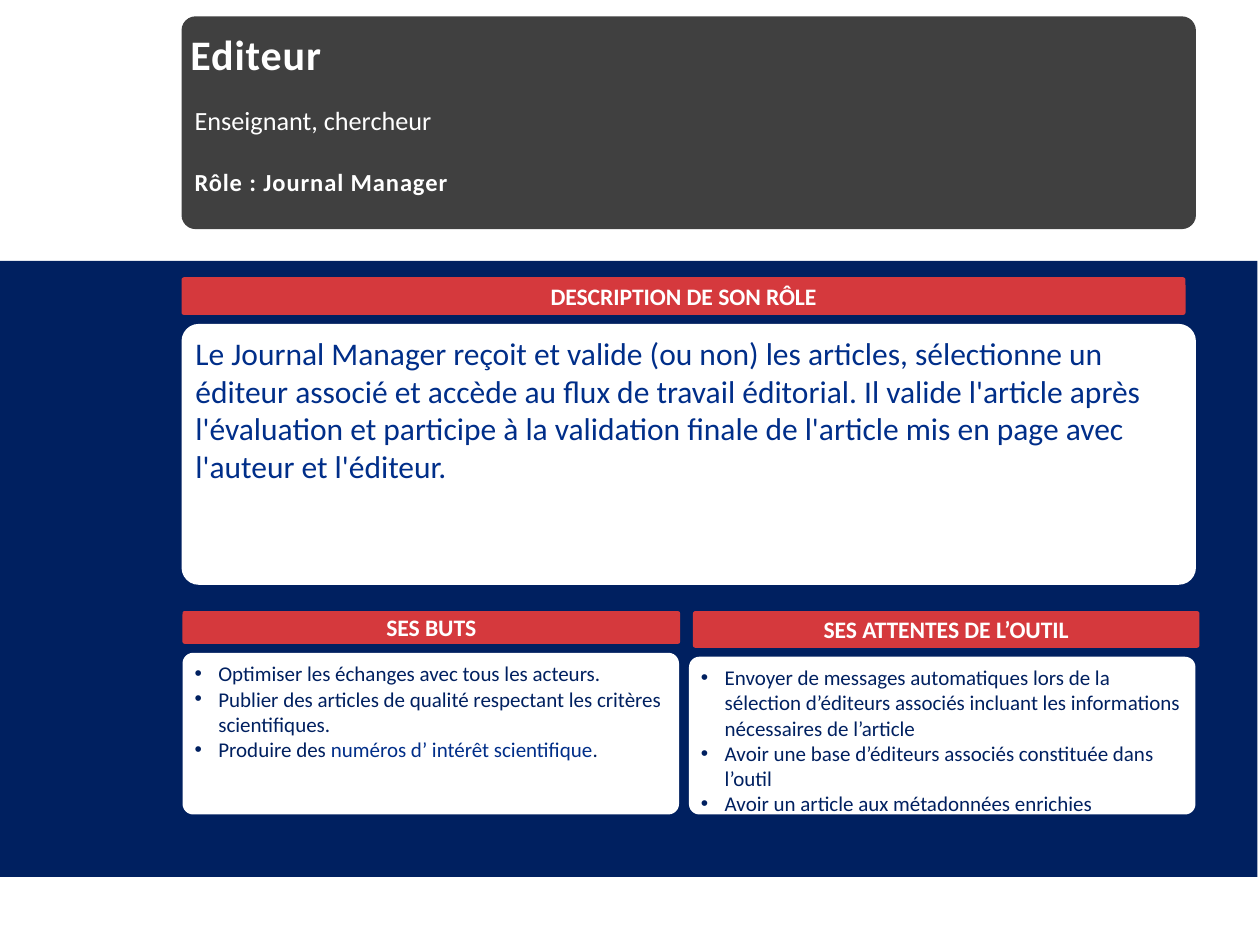
from lxml.etree import SubElement
from pptx import Presentation
from pptx.dml.color import RGBColor
from pptx.enum.shapes import MSO_SHAPE as Kind
from pptx.enum.text import MSO_ANCHOR as Anchor, MSO_AUTO_SIZE as Fit, PP_ALIGN as Align
from pptx.oxml.ns import qn
from pptx.util import Cm, Pt

HUES = {
    "navy": "002060",
    "blue": "002E89",
    "red": "D5393D",
    "dark": "404040",
    "white": "FFFFFF",
}


def hue(name):
    return RGBColor.from_string(HUES[name])


def frame(shape, anchor):
    text = shape.text_frame
    text.word_wrap = True
    text.auto_size = Fit.NONE
    text.vertical_anchor = anchor
    text.margin_left = text.margin_right = Cm(0.18)
    text.margin_top = text.margin_bottom = Cm(0.1)
    return text


def block(slide, box, fill, kind=Kind.ROUNDED_RECTANGLE, anchor=Anchor.TOP):
    shape = slide.shapes.add_shape(kind, *map(Cm, box))
    shape.shadow.inherit = False
    shape.fill.solid()
    shape.fill.fore_color.rgb = hue(fill)
    shape.line.fill.background()
    if kind == Kind.ROUNDED_RECTANGLE:
        shape.adjustments[0] = 0.066
    frame(shape, anchor)
    return shape


def style(para, size, color, bold=False, align=Align.LEFT):
    para.alignment = align
    font = para.font
    font.name = "Calibri"
    font.size = Pt(size)
    font.bold = bold
    font.color.rgb = hue(color)


def space(para):
    """Widen the letter spacing by half a point."""
    for run in para.runs:
        run._r.get_or_add_rPr().set("spc", "50")


def bullet(para):
    props = para._p.get_or_add_pPr()
    props.set("marL", str(Cm(0.48)))
    props.set("indent", str(-Cm(0.48)))
    SubElement(props, qn("a:buFont")).set("typeface", "Arial")
    SubElement(props, qn("a:buChar")).set("char", "•")


def header(slide, box, name, job, role):
    x, y, w, h = box
    card = block(slide, box, "dark", anchor=Anchor.BOTTOM)
    text = card.text_frame
    text.margin_bottom = Cm(0.58)
    first = text.paragraphs[0]
    first.text = job
    style(first, 15, "white")
    last = text.add_paragraph()
    last.text = role
    last.space_before = Pt(18)
    style(last, 14, "white", bold=True)
    space(last)

    # Title placeholder, raised above the card
    title = slide.shapes.title
    title.left, title.top, title.width, title.height = map(Cm, (x, y + 0.15, w, 1.2))
    para = frame(title, Anchor.MIDDLE).paragraphs[0]
    para.text = name
    style(para, 24, "white", bold=True)
    space(para)
    card.element.addnext(title.element)


def panel(slide, box, bar, head, paras, size, color, dots=True):
    """Place a red heading bar (shift, width, height) over a white card."""
    x, y, w, h = box
    shift, wide, tall = bar
    drop = tall + 0.18
    card = block(slide, (x, y + drop, w, h - drop), "white")
    text = card.text_frame
    for i, parts in enumerate(paras):
        para = text.add_paragraph() if i else text.paragraphs[0]
        if dots:
            bullet(para)
        style(para, size, color)
        for words, tint in parts:
            run = para.add_run()
            run.text = words
            if tint:
                run.font.color.rgb = hue(tint)

    strip = block(slide, (x + shift, y, wide, tall), "red", anchor=Anchor.MIDDLE)
    para = strip.text_frame.paragraphs[0]
    para.text = head
    style(para, 13.5, "white", bold=True, align=Align.CENTER)


def main():
    deck = Presentation()
    deck.slide_width, deck.slide_height = Cm(25.4), Cm(19.05)
    slide = deck.slides.add_slide(deck.slide_layouts[5])

    # Navy band
    block(slide, (0, 5.26, 25.35, 12.42), "navy", Kind.RECTANGLE)

    # Persona
    header(slide, (3.66, 0.33, 20.45, 4.29), "Editeur",
           "Enseignant, chercheur", "Rôle : Journal Manager")

    # Role
    about = (
        "Le Journal Manager reçoit et valide (ou non) les articles, sélectionne un "
        "éditeur associé et accède au flux de travail éditorial. Il valide l'article "
        "après l'évaluation et participe à la validation finale de l'article mis en "
        "page avec l'auteur et l'éditeur."
    )
    panel(slide, (3.66, 5.59, 20.45, 6.2), (0, 20.24, 0.76),
          "DESCRIPTION DE SON RÔLE", [[(about, None)]], 18, "blue", dots=False)

    # Goals
    goals = [
        [("Optimiser les échanges avec tous les acteurs.", None)],
        [("Publier des articles de qualité respectant les critères scientifiques.", None)],
        [("Produire des ", None), ("numéros d’ intérêt scientifique", "blue"), (".", None)],
    ]
    panel(slide, (3.68, 12.32, 10.01, 4.1), (0, 10.03, 0.66),
          "SES BUTS", goals, 12, "navy")

    # Needs
    needs = [
        [("Envoyer de messages automatiques lors de la sélection d’éditeurs associés "
          "incluant les informations nécessaires de l’article", None)],
        [("Avoir une base d’éditeurs associés constituée dans l’outil", None)],
        [("Avoir un article aux métadonnées enrichies", None)],
    ]
    panel(slide, (13.89, 12.32, 10.21, 4.1), (0.08, 10.21, 0.74),
          "SES ATTENTES DE L’OUTIL", needs, 12, "navy")

    deck.save("out.pptx")


if __name__ == "__main__":
    main()
